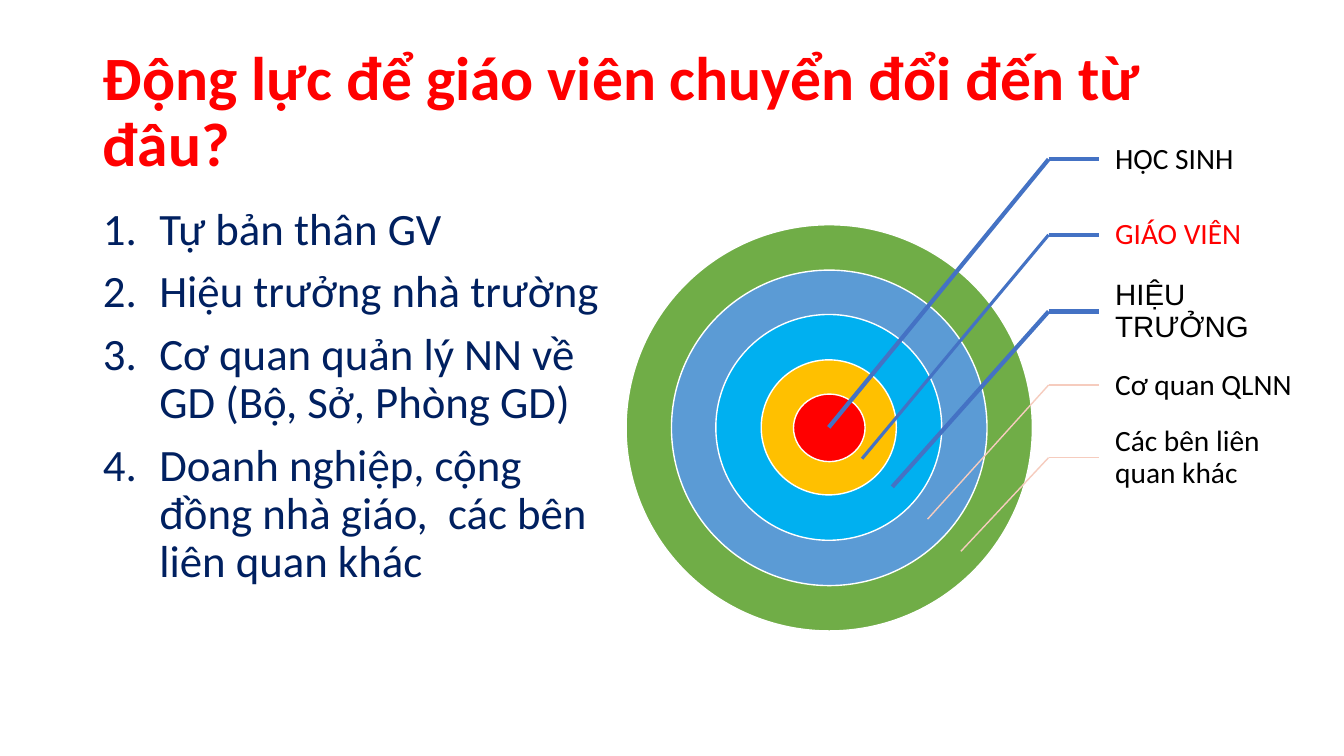
from dataclasses import dataclass

from lxml.etree import SubElement
from pptx import Presentation
from pptx.dml.color import RGBColor
from pptx.enum.shapes import MSO_CONNECTOR, MSO_SHAPE
from pptx.enum.text import MSO_ANCHOR, MSO_AUTO_SIZE, PP_ALIGN
from pptx.oxml.ns import qn
from pptx.util import Emu, Pt

SCALE = 9144  # EMU in one px, 100 px to the inch


def px(size):
    return Emu(size * SCALE)


def apply(target, form):
    """Set every attribute named in form on target."""
    for name, value in form.items():
        setattr(target, name, value)


@dataclass(frozen=True)
class Theme:
    red: str = "FF0000"
    navy: str = "002060"
    black: str = "000000"
    white: str = "FFFFFF"
    green: str = "70AD47"
    steel: str = "5B9BD5"
    sky: str = "00B0F0"
    amber: str = "FFC000"
    blue: str = "4472C4"
    pink: str = "F6CCBE"
    font: str = "Calibri"
    sans: str = "Arial"
    head: int = 44
    body: int = 32
    label: int = 21


class Board:
    def __init__(self, slide, theme):
        self.slide = slide
        self.theme = theme

    def place(self, shape, box):
        apply(shape, dict(zip(("left", "top", "width", "height"), map(px, box))))

    def text(self, para, words, size, color, font=None, bold=False, before=0):
        apply(para, {"alignment": PP_ALIGN.LEFT, "line_spacing": 0.9,
                     "space_before": Pt(before), "space_after": Pt(0)})
        run = para.add_run()
        run.text = words
        apply(run.font, {"name": font or self.theme.font, "size": Pt(size), "bold": bold})
        run.font.color.rgb = RGBColor.from_string(color)

    def frame(self, shape, anchor, inset=(10, 5, 10, 5)):
        sides = ("margin_left", "margin_top", "margin_right", "margin_bottom")
        form = {"word_wrap": True, "auto_size": MSO_AUTO_SIZE.NONE, "vertical_anchor": anchor}
        apply(shape.text_frame, form | dict(zip(sides, map(px, inset))))
        return shape.text_frame

    def title(self, words, box):
        shape = self.slide.shapes.title
        self.place(shape, box)
        frame = self.frame(shape, MSO_ANCHOR.MIDDLE)
        self.text(frame.paragraphs[0], words, self.theme.head, self.theme.red, bold=True)

    def steps(self, items, box):
        """Fill the body placeholder with a numbered list."""
        shape = self.slide.placeholders[1]
        self.place(shape, box)
        frame = self.frame(shape, MSO_ANCHOR.TOP)
        for index, item in enumerate(items):
            para = frame.add_paragraph() if index else frame.paragraphs[0]
            self.text(para, item, self.theme.body, self.theme.navy, before=10)
            props = para._p.get_or_add_pPr()
            props.set("marL", str(px(56)))
            props.set("indent", str(px(-56)))
            SubElement(props, qn("a:buFont"), typeface="+mj-lt")
            SubElement(props, qn("a:buAutoNum"), type="arabicPeriod")

    def ring(self, mid, width, height, color):
        x, y = mid
        box = map(px, (x - width // 2, y - height // 2, width, height))
        shape = self.slide.shapes.add_shape(MSO_SHAPE.OVAL, *box)
        shape.shadow.inherit = False
        shape.fill.solid()
        shape.fill.fore_color.rgb = RGBColor.from_string(color)
        shape.line.color.rgb = RGBColor.from_string(self.theme.white)
        shape.line.width = Pt(1)

    def label(self, words, box, color, font):
        shape = self.slide.shapes.add_textbox(*map(px, box))
        frame = self.frame(shape, MSO_ANCHOR.MIDDLE, (16, 3, 3, 3))
        self.text(frame.paragraphs[0], words, self.theme.label, color, font)

    def line(self, start, end, color, width):
        link = self.slide.shapes.add_connector(
            MSO_CONNECTOR.STRAIGHT, *map(px, (*start, *end)))
        link.line.color.rgb = RGBColor.from_string(color)
        link.line.width = Pt(width)
        SubElement(link._element.spPr, qn("a:effectLst"))


def main():
    deck = Presentation()
    apply(deck, {"slide_width": px(1333), "slide_height": px(750)})
    theme = Theme()
    board = Board(deck.slides.add_slide(deck.slide_layouts[1]), theme)

    board.title("Động lực để giáo viên chuyển đổi đến từ đâu?", (92, 40, 1150, 145))
    board.steps((
        "Tự bản thân GV",
        "Hiệu trưởng nhà trường",
        "Cơ quan quản lý NN về GD (Bộ, Sở, Phòng GD)",
        "Doanh nghiệp, cộng đồng nhà giáo,  các bên liên quan khác",
    ), (92, 200, 534, 476))

    center = (822, 424)
    rings = (
        (403, 403, theme.green),
        (313, 313, theme.steel),
        (224, 224, theme.sky),
        (134, 134, theme.amber),
        (71, 67, theme.red),
    )
    for width, height, color in rings:
        board.ring(center, width, height, color)

    bend, edge = 1040, 1090
    # words, colour, font, middle of the label, target, line colour, widths of both lines
    rows = (
        ("HỌC SINH", theme.black, theme.font, 158, center, theme.blue, 3, 3),
        ("GIÁO VIÊN", theme.red, theme.font, 233, (855, 455), theme.blue, 3, 2.25),
        ("HIỆU TRƯỞNG", theme.black, theme.sans, 309, (885, 483), theme.blue, 3, 3),
        ("Cơ quan QLNN", theme.black, theme.font, 382, (920, 515), theme.pink, 1, 1),
        ("Các bên liên quan khác", theme.black, theme.font, 454, (953, 547), theme.pink, 1, 1),
    )
    for words, color, font, y, target, stroke, flat, slant in rows:
        board.label(words, (edge, y - 35, 201, 71), color, font)
        board.line((bend, y), (edge, y), stroke, flat)
        board.line((bend, y), target, stroke, slant)

    deck.save("out.pptx")


if __name__ == "__main__":
    main()
